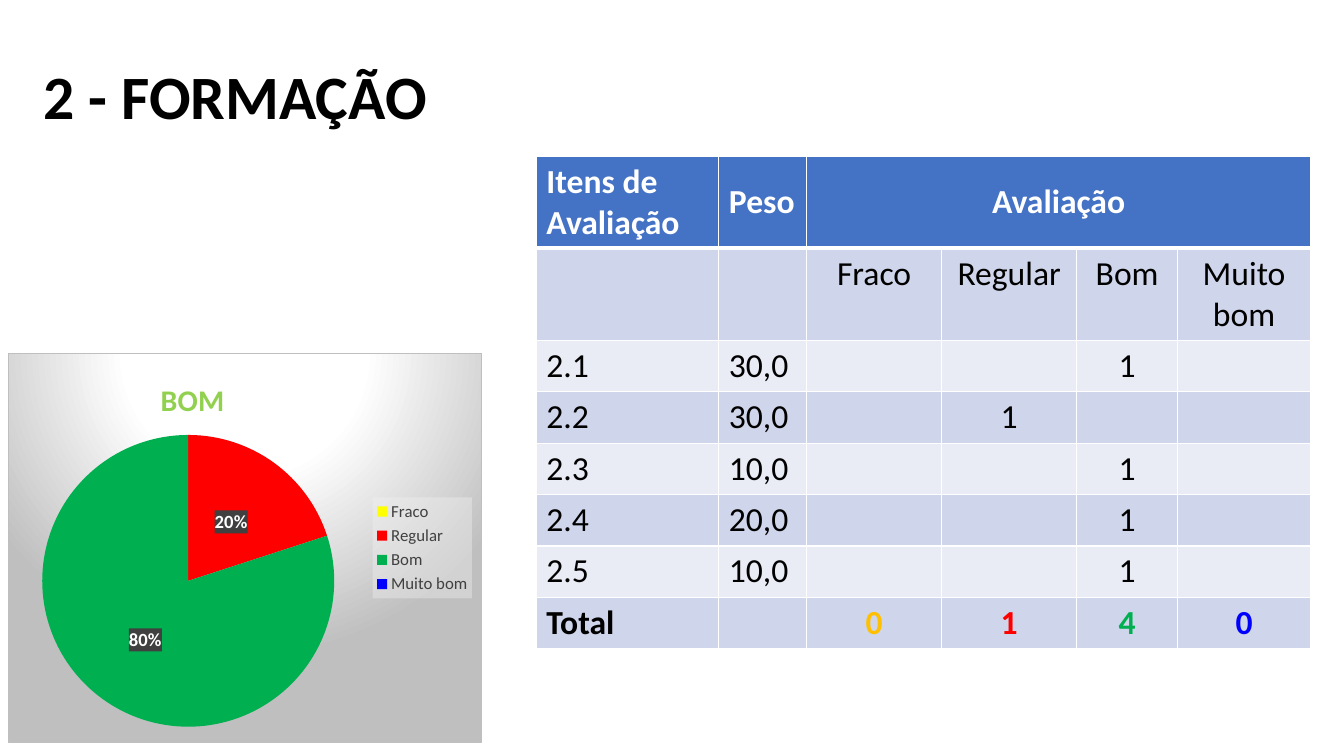
from lxml import etree
from pptx import Presentation
from pptx.chart.data import CategoryChartData
from pptx.dml.color import RGBColor
from pptx.enum.chart import XL_CHART_TYPE, XL_LABEL_POSITION, XL_LEGEND_POSITION
from pptx.enum.text import MSO_ANCHOR, PP_ALIGN
from pptx.oxml import parse_xml
from pptx.oxml.ns import nsdecls, qn
from pptx.util import Inches, Pt

PIE = XL_CHART_TYPE.PIE
CENTER, LEFT = PP_ALIGN.CENTER, PP_ALIGN.LEFT
MIDDLE, TOP = MSO_ANCHOR.MIDDLE, MSO_ANCHOR.TOP
LEGEND_RIGHT = XL_LEGEND_POSITION.RIGHT
LABEL_CENTER = XL_LABEL_POSITION.CENTER

FONT = "Calibri"
COLORS = {
    "black": "000000", "white": "FFFFFF", "header": "4472C4",
    "band_dark": "CFD5EA", "band_light": "E9EBF5", "gray": "BFBFBF",
    "legend": "404040", "legend_back": "F2F2F2", "label_back": "404040",
    "chart_title": "92D050", "amber": "FFC000", "yellow": "FFFF00",
    "red": "FF0000", "green": "00B050", "blue": "0000FF",
}
TITLE = "2 - FORMAÇÃO"
RATINGS = ["Fraco", "Regular", "Bom", "Muito bom"]
ROWS = [
    ["Itens de Avaliação", "Peso", "Avaliação", "", "", ""],
    ["", "", *RATINGS],
    ["2.1", "30,0", "", "", "1", ""],
    ["2.2", "30,0", "", "1", "", ""],
    ["2.3", "10,0", "", "", "1", ""],
    ["2.4", "20,0", "", "", "1", ""],
    ["2.5", "10,0", "", "", "1", ""],
    ["Total", "", "0", "1", "4", "0"],
]
COLUMN_WIDTHS = [1.81, 0.87, 1.34, 1.34, 1, 1.32]
ROW_HEIGHTS = [0.9, 0.91] + [0.51] * 6
TOTAL_COLORS = ["black", "black", "amber", "red", "green", "blue"]
CHART_TITLE = "BOM"
SHARES = [None, 20, 80, None]
SLICE_COLORS = ["yellow", "red", "green", "blue"]


def rgb(name):
    return RGBColor.from_string(COLORS[name])


def style_font(font, size, color, bold=False):
    font.name, font.size, font.bold = FONT, Pt(size), bold
    font.color.rgb = rgb(color)


def add_title(slide):
    title = slide.shapes.title
    title.left, title.top = Inches(0.33), Inches(0.26)
    title.width, title.height = Inches(6.75), Inches(1.45)
    frame = title.text_frame
    frame.text = TITLE
    frame.vertical_anchor = MIDDLE
    para = frame.paragraphs[0]
    para.alignment, para.line_spacing = LEFT, 0.9
    style_font(para.runs[0].font, 44, "black", True)


def set_borders(cell, bottom, top):
    properties = cell._tc.get_or_add_tcPr()
    sides = [("lnL", 1), ("lnR", 1), ("lnT", top), ("lnB", bottom)]
    for index, (side, width) in enumerate(sides):
        properties.insert(index, parse_xml(
            f'<a:{side} {nsdecls("a")} w="{Pt(width)}"><a:solidFill>'
            f'<a:srgbClr val="{COLORS["white"]}"/></a:solidFill></a:{side}>'))


def add_table(slide):
    table = slide.shapes.add_table(
        len(ROWS), len(COLUMN_WIDTHS), Inches(5.32), Inches(1.55),
        Inches(sum(COLUMN_WIDTHS)), Inches(sum(ROW_HEIGHTS))).table
    for column, width in zip(table.columns, COLUMN_WIDTHS):
        column.width = Inches(width)
    for row, height in zip(table.rows, ROW_HEIGHTS):
        row.height = Inches(height)
    last = len(ROWS) - 1
    for r, texts in enumerate(ROWS):
        for c, text in enumerate(texts):
            cell = table.cell(r, c)
            band = "band_dark" if r % 2 else "band_light"
            cell.fill.solid()
            cell.fill.fore_color.rgb = rgb("header" if r == 0 else band)
            set_borders(cell, 3 if r == 0 else 1, 3 if r == 1 else 1)
            cell.vertical_anchor = MIDDLE if r == 0 else TOP
            cell.text = text
            para = cell.text_frame.paragraphs[0]
            para.alignment = CENTER if c > 1 else LEFT
            color = {0: "white", last: TOTAL_COLORS[c]}.get(r, "black")
            for span in para.runs:
                style_font(span.font, 24, color, r in (0, last))
    table.cell(0, 2).merge(table.cell(0, 5))


def make_layout(x, y, w=None, h=None, inner=False):
    """Return a manual chart layout, in fractions of the chart area."""
    layout = etree.Element(qn("c:layout"))
    manual = etree.SubElement(layout, qn("c:manualLayout"))
    values = [("layoutTarget", "inner" if inner else None),
              ("xMode", "edge"), ("yMode", "edge"),
              ("x", x), ("y", y), ("w", w), ("h", h)]
    for tag, value in values:
        if value is not None:
            etree.SubElement(manual, qn(f"c:{tag}")).set("val", str(value))
    return layout


def place(element, layout, index):
    for old in element.findall(qn("c:layout")):
        element.remove(old)
    element.insert(index, layout)


def back_fill(color, alpha):
    return parse_xml(
        f'<c:spPr {nsdecls("c", "a")}><a:solidFill><a:srgbClr val="{COLORS[color]}">'
        f'<a:alpha val="{alpha * 1000}"/></a:srgbClr></a:solidFill></c:spPr>')


def chart_background():
    stops = "".join(
        f'<a:gs pos="{position * 1000}"><a:srgbClr val="{COLORS[color]}"/></a:gs>'
        for position, color in [(0, "white"), (39, "white"), (100, "gray")])
    return parse_xml(
        f'<c:spPr {nsdecls("c", "a")}><a:gradFill><a:gsLst>{stops}</a:gsLst>'
        '<a:path path="circle"><a:fillToRect l="50000" t="-80000" r="50000" '
        f'b="180000"/></a:path></a:gradFill><a:ln w="{Pt(0.75)}"><a:solidFill>'
        f'<a:srgbClr val="{COLORS["gray"]}"/></a:solidFill></a:ln></c:spPr>')


def add_before_text(element, properties):
    element.find(qn("c:txPr")).addprevious(properties)


def add_pie(slide):
    data = CategoryChartData()
    data.categories = RATINGS
    data.add_series("Series 1", SHARES)
    chart = slide.shapes.add_chart(
        PIE, Inches(0.08), Inches(3.5), Inches(4.7), Inches(3.87), data).chart
    style_font(chart.font, 10, "black")
    add_before_text(chart._chartSpace, chart_background())

    chart.has_title = True
    frame = chart.chart_title.text_frame
    frame.text = CHART_TITLE
    style_font(frame.paragraphs[0].runs[0].font, 21.5, "chart_title", True)
    place(chart.chart_title._element, make_layout(0.31, 0.05), 1)

    chart.has_legend = True
    legend = chart.legend
    legend.position, legend.include_in_layout = LEGEND_RIGHT, False
    style_font(legend.font, 12, "legend")
    place(legend._element, make_layout(0.77, 0.37, 0.21, 0.26), 1)
    add_before_text(legend._element, back_fill("legend_back", 39))

    plot = chart.plots[0]
    plot.vary_by_categories = True
    place(plot._element.getparent(),
          make_layout(0.07, 0.21, 0.62, 0.75, inner=True), 0)
    series = plot.series[0]
    for index, color in enumerate(SLICE_COLORS):
        fill = series.points[index].format.fill
        fill.solid()
        fill.fore_color.rgb = rgb(color)
    labels = series.data_labels
    labels.show_percentage, labels.show_value = True, False
    labels.number_format, labels.number_format_is_linked = "0%", False
    labels.position = LABEL_CENTER
    style_font(labels.font, 13.3, "white", True)
    add_before_text(labels._element, back_fill("label_back", 90))


def main():
    deck = Presentation()
    deck.slide_width, deck.slide_height = Inches(13.33), Inches(7.5)
    slide = deck.slides.add_slide(deck.slide_layouts[5])
    add_title(slide)
    add_table(slide)
    add_pie(slide)
    deck.save("out.pptx")


if __name__ == "__main__":
    main()
